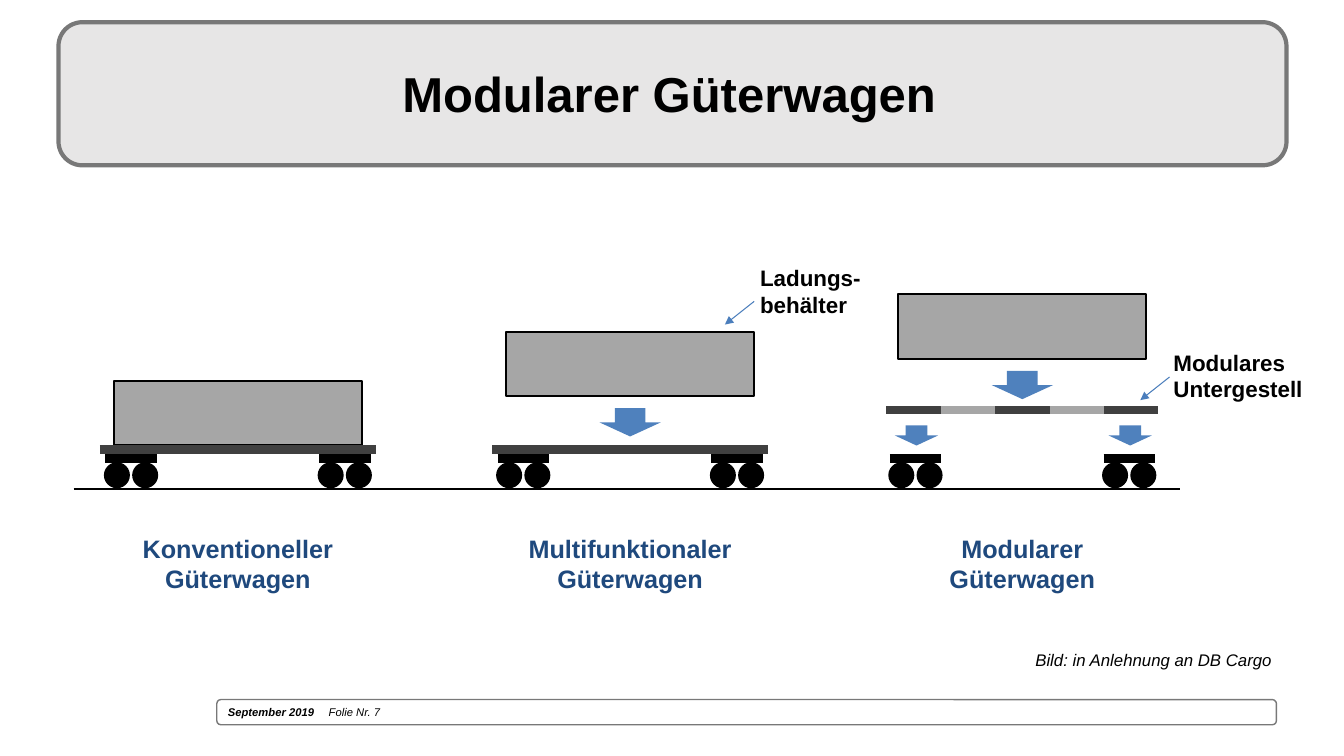
from lxml.etree import SubElement
from pptx import Presentation
from pptx.dml.color import RGBColor
from pptx.enum.shapes import MSO_CONNECTOR, MSO_SHAPE
from pptx.enum.text import MSO_ANCHOR, PP_ALIGN
from pptx.oxml.ns import qn
from pptx.util import Inches, Pt

WIDTH, HEIGHT = 13.33, 7.5
FIRST_CENTRE, COLUMN = 2.36, 3.89
RAIL, AXLE_TOP, BOGIE, DECK, MODULAR_DECK = 4.85, 4.6, 4.55, 4.46, 4.07
BOGIE_OFFSET, BOGIE_WIDTH, WHEEL = 1.06, 0.51, 0.23
DECK_WIDTH, SEGMENT = 2.74, 0.54
LOAD_WIDTH, LOAD_HEIGHT = 2.46, 0.64
BLACK, DARK, GREY, BLUE, NAVY = "000000", "404040", "A6A6A6", "4F81BD", "1F497D"
CAPTIONS = ("Konventioneller", "Multifunktionaler", "Modularer")
LOAD_TOPS = (3.78, 3.29, 2.92)


def colour(value):
    return RGBColor.from_string(value)


def add_block(slide, preset, left, top, width, height, fill, outline=None, weight=1):
    block = slide.shapes.add_shape(
        preset, Inches(left), Inches(top), Inches(width), Inches(height))
    block.shadow.inherit = False
    block.fill.solid()
    block.fill.fore_color.rgb = colour(fill)
    if outline:
        block.line.color.rgb = colour(outline)
        block.line.width = Pt(weight)
    else:
        block.line.fill.background()
    return block


def add_line(slide, start, end, stroke, weight):
    line = slide.shapes.add_connector(
        MSO_CONNECTOR.STRAIGHT, *(Inches(value) for value in start + end))
    line.line.color.rgb = colour(stroke)
    line.line.width = Pt(weight)
    SubElement(line.element.spPr, qn("a:effectLst"))
    return line


def add_bar(slide, centre, y, width, stroke):
    """Draw a thick horizontal beam around its centre."""
    add_line(slide, (centre - width / 2, y), (centre + width / 2, y), stroke, 6)


def add_pointer(slide, x, y):
    """Draw a thin arrow from a label down to its tip at x, y."""
    pointer = add_line(slide, (x, y), (x + 0.29, y - 0.23), "4B7EBC", 0.75)
    SubElement(pointer.line._get_or_add_ln(), qn("a:headEnd"), type="triangle")


def add_run(paragraph, wording, size, ink=BLACK, bold=False, italic=False):
    run = paragraph.add_run()
    run.text = wording
    run.font.name = "Arial"
    run.font.size = Pt(size)
    run.font.bold = bold
    run.font.italic = italic
    run.font.color.rgb = colour(ink)


def add_label(slide, left, top, width, height, lines, size, align=PP_ALIGN.LEFT, **style):
    label = slide.shapes.add_textbox(
        Inches(left), Inches(top), Inches(width), Inches(height))
    label.text_frame.word_wrap = True
    paragraph = label.text_frame.paragraphs[0]
    paragraph.alignment = align
    for number, wording in enumerate(lines):
        if number:
            paragraph.add_line_break()
        add_run(paragraph, wording, size, **style)


def add_down_arrow(slide, centre, top, width, height):
    add_block(slide, MSO_SHAPE.DOWN_ARROW, centre - width / 2, top, width, height, BLUE)


def add_bogie(slide, centre):
    left = centre - BOGIE_WIDTH / 2
    for wheel_left in (left, left + BOGIE_WIDTH - WHEEL):
        add_block(slide, MSO_SHAPE.OVAL, wheel_left, AXLE_TOP, WHEEL, WHEEL, BLACK, BLACK, 2)
    add_bar(slide, centre, BOGIE, BOGIE_WIDTH, BLACK)


def add_wagon(slide, centre, load_top, modular):
    bogies = (centre - BOGIE_OFFSET, centre + BOGIE_OFFSET)
    for bogie in bogies:
        add_bogie(slide, bogie)
    add_block(slide, MSO_SHAPE.RECTANGLE, centre - LOAD_WIDTH / 2, load_top,
              LOAD_WIDTH, LOAD_HEIGHT, GREY, BLACK, 1.5)
    if modular:
        for bogie in bogies:
            add_down_arrow(slide, bogie + 0.01, 4.22, 0.43, 0.2)
        for part in range(-2, 3):
            add_bar(slide, centre + part * SEGMENT, MODULAR_DECK, SEGMENT,
                    GREY if part % 2 else DARK)
    else:
        add_bar(slide, centre, DECK, DECK_WIDTH, DARK)


def add_footer(slide):
    footer = add_block(slide, MSO_SHAPE.ROUNDED_RECTANGLE, 2.15, 6.94, 10.51, 0.25,
                       "FFFFFF", "787878", 1)
    footer.text_frame.vertical_anchor = MSO_ANCHOR.MIDDLE
    paragraph = footer.text_frame.paragraphs[0]
    paragraph.alignment = PP_ALIGN.LEFT
    tabs = SubElement(paragraph._p.get_or_add_pPr(), qn("a:tabLst"))
    SubElement(tabs, qn("a:tab"), pos=str(Inches(1)), algn="l")
    add_run(paragraph, "September 2019\t", 8, bold=True, italic=True)
    add_run(paragraph, "Folie Nr. 7", 8, italic=True)


def add_heading(slide):
    add_block(slide, MSO_SHAPE.ROUNDED_RECTANGLE, 0.58, 0.22, 12.18, 1.42,
              "E7E6E6", "787878", 3)
    title = slide.shapes.title
    title.left, title.top = Inches(0.31), Inches(0.2)
    title.width, title.height = Inches(12.66), Inches(1.45)
    title.text_frame.vertical_anchor = MSO_ANCHOR.MIDDLE
    paragraph = title.text_frame.paragraphs[0]
    paragraph.alignment = PP_ALIGN.CENTER
    add_run(paragraph, "Modularer Güterwagen", 35, bold=True)
    title.element.getparent().append(title.element)


def main():
    deck = Presentation()
    deck.slide_width, deck.slide_height = Inches(WIDTH), Inches(HEIGHT)
    slide = deck.slides.add_slide(deck.slide_layouts[5])
    add_footer(slide)
    add_heading(slide)

    for column, (caption, load_top) in enumerate(zip(CAPTIONS, LOAD_TOPS)):
        centre = FIRST_CENTRE + column * COLUMN
        add_wagon(slide, centre, load_top, modular=column == 2)
        if column:
            add_down_arrow(slide, centre, load_top + LOAD_HEIGHT + 0.12, 0.61, 0.28)
        add_label(slide, centre - 1.93, 5.24, 3.86, 0.71, (caption, "Güterwagen"), 18,
                  PP_ALIGN.CENTER, ink=NAVY, bold=True)

    add_label(slide, 7.44, 2.57, 1.82, 0.64, ("Ladungs-", "behälter"), 16, bold=True)
    add_pointer(slide, 7.19, 3.22)
    add_label(slide, 11.54, 3.41, 1.57, 0.64, ("Modulares Untergestell",), 16, bold=True)
    add_pointer(slide, 11.31, 3.97)
    add_line(slide, (0.73, RAIL), (11.7, RAIL), BLACK, 1.25)
    add_label(slide, 10.17, 6.4, 2.58, 0.3, ("Bild: in Anlehnung an DB Cargo",), 12, italic=True)
    deck.save("out.pptx")


if __name__ == "__main__":
    main()
